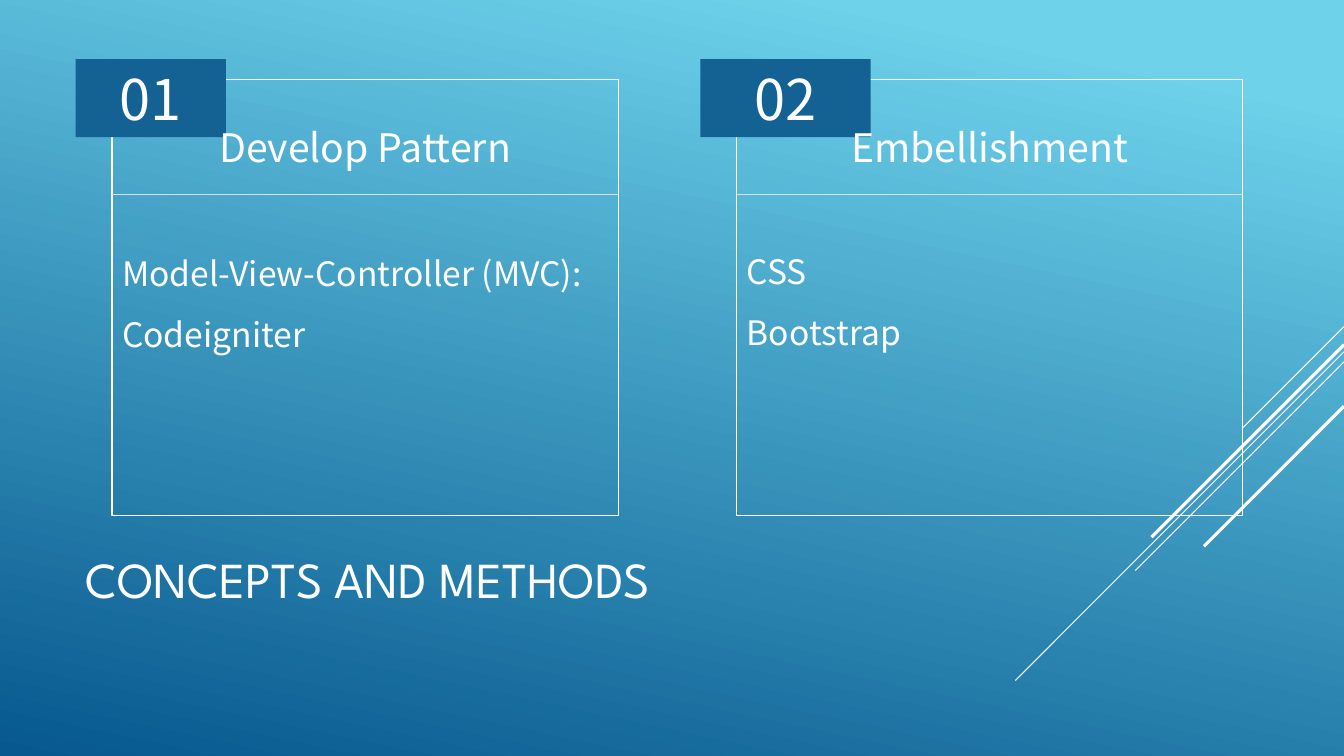
import pptx
import pptx.dml.color
import pptx.enum.shapes
import pptx.enum.text
import pptx.oxml.ns
import pptx.util
import lxml.etree

Pt = pptx.util.Pt
Color = pptx.dml.color.RGBColor.from_string
Align = pptx.enum.text.PP_ALIGN
Anchor = pptx.enum.text.MSO_ANCHOR
AutoSize = pptx.enum.text.MSO_AUTO_SIZE

theme = {
    "white": "FFFFFF", "divider": "DDDDDD", "badge": "146194",
    "light": "6ED2EB", "dark": "06588E",
    "title_font": "League Spartan", "text_font": "Noto Sans CJK SC",
    "title": 36, "number": 40, "heading": 28, "list": 24,
}


def write(shape, lines, size, font="text_font", align=Align.LEFT, spacing=1.0,
          anchor=Anchor.TOP, auto_size=AutoSize.SHAPE_TO_FIT_TEXT):
    frame = shape.text_frame
    frame.word_wrap = True
    frame.auto_size = auto_size
    frame.vertical_anchor = anchor
    for index, line in enumerate(lines):
        paragraph = frame.add_paragraph() if index else frame.paragraphs[0]
        paragraph.alignment = align
        paragraph.line_spacing = spacing
        paragraph.space_before = Pt(0)
        run = paragraph.add_run()
        run.text = line
        run.font.name = theme[font]
        run.font.size = Pt(theme[size])
        run.font.color.rgb = Color(theme["white"])


def draw_line(slide, start, end, color, width):
    line = slide.shapes.add_connector(
        pptx.enum.shapes.MSO_CONNECTOR.STRAIGHT,
        Pt(start[0]), Pt(start[1]), Pt(end[0]), Pt(end[1]))
    line.line.color.rgb = Color(theme[color])
    line.line.width = Pt(width)
    lxml.etree.SubElement(line._element.spPr, pptx.oxml.ns.qn("a:effectLst"))


presentation = pptx.Presentation()
presentation.slide_width = Pt(960)
presentation.slide_height = Pt(540)
slide = presentation.slides.add_slide(presentation.slide_layouts[3])

background = slide.background.fill
background.gradient()
background.gradient_angle = 258
for stop, position, color in zip(background.gradient_stops, (0.1, 1), ("light", "dark")):
    stop.position = position
    stop.color.rgb = Color(theme[color])

for top, run_length, width in [
    (233.3, 72, 0.75), (251.3, 234.7, 0.75), (258.5, 149, 0.75),
    (246.2, 137.5, 2.25), (290.2, 100, 2.25),
]:
    draw_line(slide, (960, top), (960 - run_length, top + run_length), "white", width)

title = slide.shapes.title
title.left, title.top, title.width, title.height = Pt(54), Pt(353.5), Pt(672), Pt(119)
write(title, ["CONCEPTS AND METHODS"], "title", font="title_font",
      anchor=Anchor.MIDDLE, auto_size=AutoSize.NONE)

card_width = 361.5
rectangle = pptx.enum.shapes.MSO_SHAPE.RECTANGLE
cards = [
    (80, 107.3, 162.7, "01", "Develop Pattern",
     ["Model-View-Controller (MVC):", "Codeigniter"]),
    (526.3, 121.7, 161.3, "02", "Embellishment", ["CSS", "Bootstrap"]),
]
for placeholder_index, card in enumerate(cards, start=1):
    left, badge_width, list_top, number, heading, items = card

    outline = slide.shapes.add_shape(rectangle, Pt(left), Pt(56.7), Pt(card_width), Pt(311.6))
    outline.shadow.inherit = False
    outline.fill.background()
    outline.line.color.rgb = Color(theme["white"])
    outline.line.width = Pt(0.75)

    draw_line(slide, (left, 138.9), (left + card_width, 138.9), "divider", 0.5)

    badge = slide.shapes.add_shape(rectangle, Pt(left - 26), Pt(42.3), Pt(badge_width), Pt(55.7))
    badge.shadow.inherit = False
    badge.fill.solid()
    badge.fill.fore_color.rgb = Color(theme["badge"])
    badge.line.fill.background()
    write(badge, [number], "number", align=Align.CENTER)

    heading_box = slide.shapes.add_textbox(Pt(left), Pt(67.7), Pt(card_width), Pt(52.6))
    write(heading_box, [heading], "heading", align=Align.CENTER, spacing=1.5)

    body = slide.placeholders[placeholder_index]
    body.left, body.top = Pt(left), Pt(list_top)
    body.width, body.height = Pt(card_width), Pt(94.3)
    write(body, items, "list", spacing=1.5)
    for paragraph in body.text_frame.paragraphs:
        properties = paragraph._p.get_or_add_pPr()
        properties.set("marL", "0")
        properties.set("indent", "0")
        lxml.etree.SubElement(properties, pptx.oxml.ns.qn("a:buNone"))

presentation.save("out.pptx")
